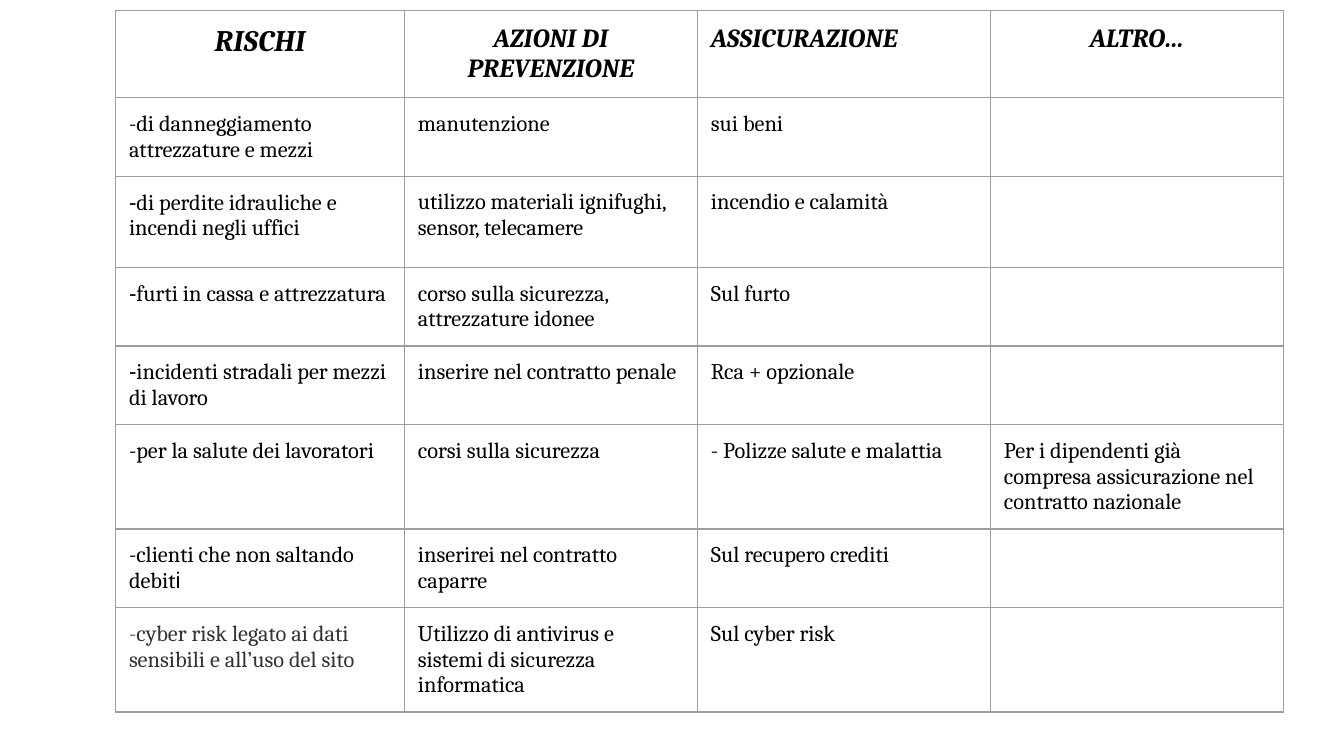
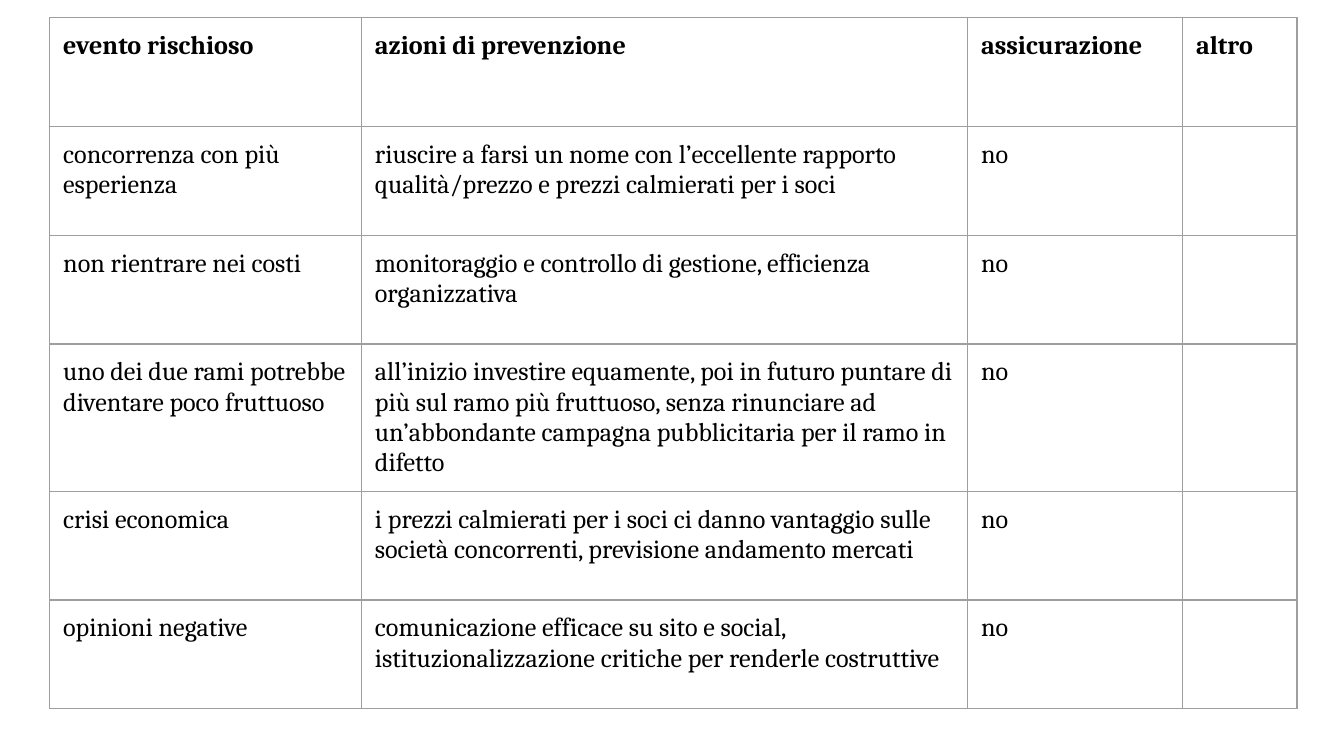
from lxml import etree
from pptx import Presentation
from pptx.dml.color import RGBColor
from pptx.enum import text
from pptx.oxml import ns
from pptx.util import Pt

COLORS = {"text": "000000", "border": "9E9E9E", "paper": "FFFFFF",
          "dash": "666666", "muted": "333333"}
BODY = {"name": "Cambria", "size": 12, "bold": False, "italic": False, "color": "text"}
ARIAL = {"name": "Arial"}
CENTER = text.PP_ALIGN.CENTER
LEFT = text.PP_ALIGN.LEFT


class Deck:
    """Style and current slide; lengths are in grid units, 100 to the slide width."""

    def __init__(self, prs):
        self.prs = prs
        self.unit = prs.slide_width / 100
        self.s = None

    def grid(self, n):
        return round(n * self.unit)

    def slide(self):
        self.s = self.prs.slides.add_slide(self.prs.slide_layouts[6])
        fill = self.s.background.fill
        fill.solid()
        fill.fore_color.rgb = RGBColor.from_string(COLORS["paper"])

    def run(self, p, words, style):
        r = p.add_run()
        r.text = words
        for key, value in style.items():
            if key == "color":
                r.font.color.rgb = RGBColor.from_string(COLORS[value])
            else:
                setattr(r.font, key, Pt(value) if key == "size" else value)

    def borders(self, cell):
        tc_pr = cell._tc.get_or_add_tcPr()
        for i, side in enumerate(("lnL", "lnR", "lnT", "lnB")):
            ln = etree.Element(ns.qn(f"a:{side}"), w=str(Pt(0.75)))
            fill = etree.SubElement(ln, ns.qn("a:solidFill"))
            etree.SubElement(fill, ns.qn("a:srgbClr"), val=COLORS["border"])
            tc_pr.insert(i, ln)

    def cell(self, cell, content, style, align):
        for side in ("left", "right", "top", "bottom"):
            setattr(cell, f"margin_{side}", self.grid(1))
        cell.fill.background()
        self.borders(cell)
        if not content:
            return
        p = cell.text_frame.paragraphs[0]
        p.alignment = align
        # A cell is plain words, or a list of (words, changes of style)
        runs = [(content, {})] if isinstance(content, str) else content
        for words, change in runs:
            self.run(p, words, {**style, **change})

    def table(self, box, cols, rows, data, head, body, head_align):
        frame = self.s.shapes.add_table(len(rows), len(cols), *map(self.grid, box))
        tbl = frame.table
        tbl.first_row = tbl.horz_banding = False
        for column, width in zip(tbl.columns, cols):
            column.width = self.grid(width)
        for row, height in zip(tbl.rows, rows):
            row.height = self.grid(height)
        frame.height = self.grid(box[3])
        for i, line in enumerate(data):
            for j in range(len(cols)):
                content = line[j] if j < len(line) else ""
                self.cell(tbl.cell(i, j), content, body if i else head,
                          LEFT if i else head_align[j])


RISKS = [
    [[("RISCHI", {"size": 16})], "AZIONI DI PREVENZIONE", "ASSICURAZIONE", "ALTRO…"],
    ["-di danneggiamento attrezzature e mezzi", "manutenzione", "sui beni"],
    [[("-", ARIAL), ("di perdite idrauliche e incendi negli uffici", {})],
     "utilizzo materiali ignifughi, sensor, telecamere", "incendio e calamità"],
    [[("-", ARIAL), ("furti in cassa e attrezzatura", {})],
     "corso sulla sicurezza, attrezzature idonee", "Sul furto"],
    [[("-", ARIAL), ("incidenti stradali per mezzi di lavoro", {})],
     "inserire nel contratto penale", "Rca + opzionale"],
    ["-per la salute dei lavoratori", "corsi sulla sicurezza", "- Polizze salute e malattia",
     "Per i dipendenti già compresa assicurazione nel contratto nazionale"],
    [[("-clienti che non saltando debit", {}), ("i", ARIAL)],
     "inserirei nel contratto caparre", "Sul recupero crediti"],
    [[("-", {"color": "dash"}),
      ("cyber risk legato ai dati sensibili e all’uso del sito", {"color": "muted"})],
     "Utilizzo di antivirus e sistemi di sicurezza informatica", "Sul cyber risk"],
]

EVENTS = [
    ["evento rischioso", "azioni di prevenzione", "assicurazione", "altro"],
    ["concorrenza con più esperienza",
     "riuscire a farsi un nome con l’eccellente rapporto qualità/prezzo "
     "e prezzi calmierati per i soci", "no"],
    ["non rientrare nei costi",
     "monitoraggio e controllo di gestione, efficienza organizzativa", "no"],
    ["uno dei due rami potrebbe diventare poco fruttuoso",
     "all’inizio investire equamente, poi in futuro puntare di più sul ramo più fruttuoso, "
     "senza rinunciare ad un’abbondante campagna pubblicitaria per il ramo in difetto", "no"],
    ["crisi economica",
     "i prezzi calmierati per i soci ci danno vantaggio sulle società concorrenti, "
     "previsione andamento mercati", "no"],
    ["opinioni negative",
     "comunicazione efficace su sito e social, "
     "istituzionalizzazione critiche per renderle costruttive", "no"],
]


def main():
    prs = Presentation()
    prs.slide_width = Pt(720)
    prs.slide_height = Pt(405)
    deck = Deck(prs)
    large = {**BODY, "size": 14}
    bold = {**large, "bold": True}

    # Risks and their insurance
    deck.slide()
    deck.table((8.6, 0.8, 86.9, 54.7), [21.5] + [21.8] * 3,
               [5.7, 5.7, 6.8, 5.4, 5.7, 7.5, 5, 3.7], RISKS,
               {**bold, "italic": True}, BODY, [CENTER, CENTER, LEFT, CENTER])

    # Risky events
    deck.slide()
    deck.table((3.7, 1.3, 92.7, 54.5), [23.2, 45.1, 16, 8.5], [8.1] * len(EVENTS),
               EVENTS, bold, large, [LEFT] * 4)

    prs.save("out.pptx")


if __name__ == "__main__":
    main()
